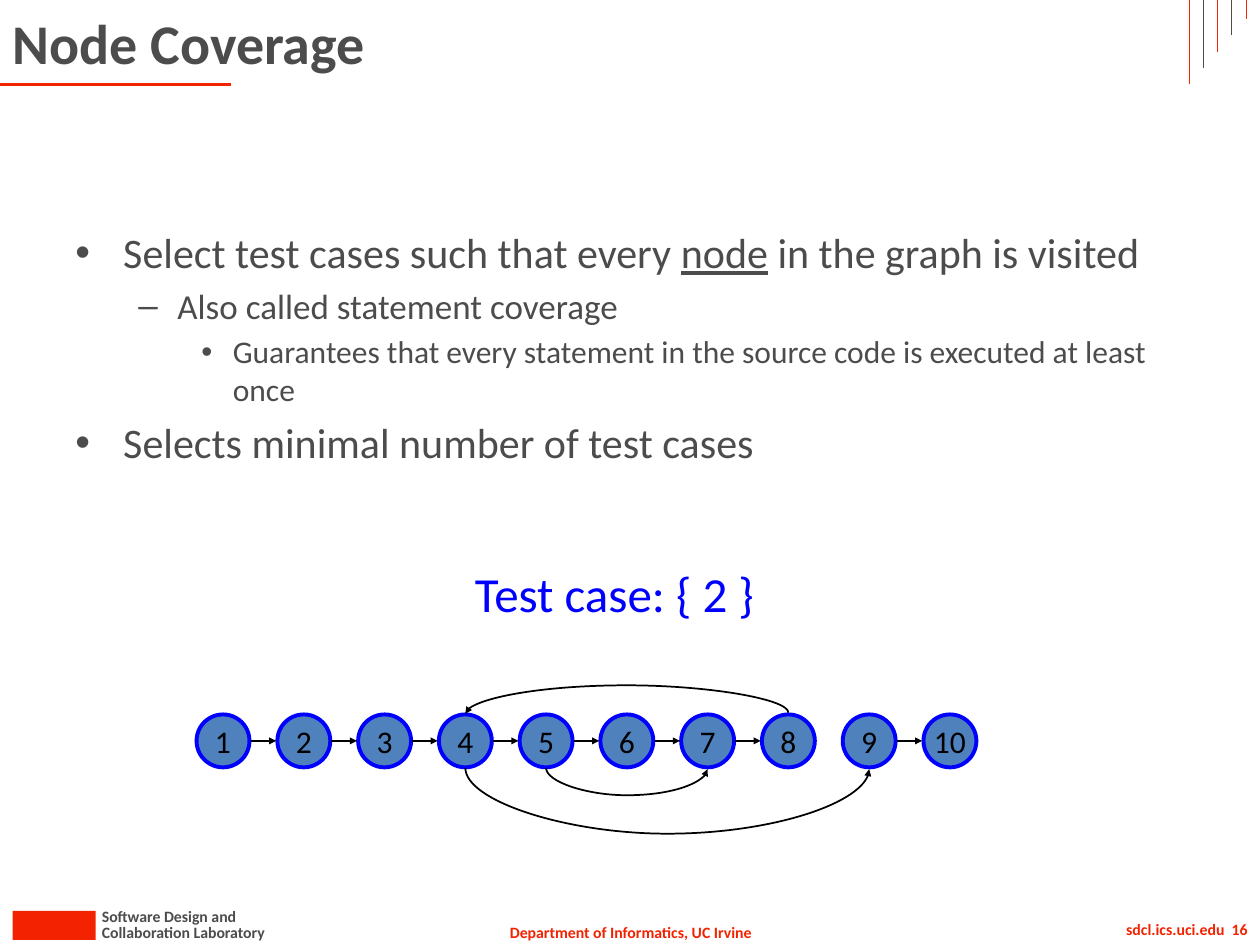
import pptx
import pptx.dml.color
import pptx.enum.shapes
import pptx.enum.text
import pptx.oxml
import pptx.oxml.ns
import pptx.util

Inches = pptx.util.Inches
Pt = pptx.util.Pt
RGBColor = pptx.dml.color.RGBColor
ALIGN = pptx.enum.text.PP_ALIGN
ANCHOR = pptx.enum.text.MSO_ANCHOR
CONNECTOR = pptx.enum.shapes.MSO_CONNECTOR
SHAPE = pptx.enum.shapes.MSO_SHAPE
qn = pptx.oxml.ns.qn

RED = RGBColor(0xF3, 0x22, 0x00)
GRAY = RGBColor(0x4C, 0x4C, 0x4C)
BLUE = RGBColor(0x00, 0x00, 0xFF)
STEEL = RGBColor(0x4F, 0x81, 0xBD)
BLACK = RGBColor(0x00, 0x00, 0x00)

FONT = "Calibri"
NODE_COUNT = 10
NODE_SIZE = 0.42
NODE_PITCH = 0.641
FIRST_CENTER = 1.77
NODE_MIDDLE = 5.88
NODE_REACH = 0.22
ARC_WIDTH = 0.01


def add_element(parent, tag, **attributes):
    """Append a DrawingML element and return it."""
    element = pptx.oxml.parse_xml(f"<a:{tag} {pptx.oxml.ns.nsdecls('a')}/>")
    for name, value in attributes.items():
        element.set(name, str(value))
    parent.append(element)
    return element


def write_text(para, text, size=18, color=GRAY, bold=False, underline=False, align=None):
    """Add a formatted span to a paragraph."""
    if align is not None:
        para.alignment = align
    span = para.add_run()
    span.text = text
    span.font.name = FONT
    span.font.size = Pt(size)
    span.font.bold = bold
    span.font.underline = underline
    span.font.color.rgb = color


def add_label(page, text, left, top, width, height, wrap=False, **text_format):
    """Add a text box holding one line."""
    box = page.shapes.add_textbox(Inches(left), Inches(top), Inches(width), Inches(height))
    box.text_frame.word_wrap = wrap
    write_text(box.text_frame.paragraphs[0], text, **text_format)


def add_title(page, text):
    """Place and format the title placeholder."""
    title = page.shapes.title
    title.left, title.top = Inches(0), Inches(0)
    title.width, title.height = Inches(9), Inches(0.67)
    title.text_frame.vertical_anchor = ANCHOR.MIDDLE
    write_text(title.text_frame.paragraphs[0], text, size=32, bold=True, align=ALIGN.LEFT)


def add_bullets(page, items):
    """Add the bulleted outline from (level, spans) pairs."""
    levels = [(24, 0.38, 0.38, "•"), (20, 0.81, 0.31, "–"), (18, 1.25, 0.25, "•")]
    box = page.shapes.add_textbox(Inches(0.5), Inches(1.75), Inches(8.94), Inches(4.95))
    frame = box.text_frame
    frame.word_wrap = True
    for index, (level, spans) in enumerate(items):
        size, margin, hang, mark = levels[level]
        para = frame.add_paragraph() if index else frame.paragraphs[0]
        para.level = level
        para.space_before = Pt(size * 0.2)
        properties = para._p.get_or_add_pPr()
        properties.set("marL", str(Inches(margin)))
        properties.set("indent", str(-Inches(hang)))
        add_element(properties, "buFont", typeface="Arial")
        add_element(properties, "buChar", char=mark)
        for text, underline in spans:
            write_text(para, text, size=size, underline=underline)


def add_block(page, kind, left, top, width, height, fill):
    """Add a filled preset shape without line or shadow."""
    block = page.shapes.add_shape(kind, Inches(left), Inches(top), Inches(width), Inches(height))
    block.shadow.inherit = False
    block.fill.solid()
    block.fill.fore_color.rgb = fill
    block.line.fill.background()
    return block


def add_line(page, start, end, color=BLACK, width=1, arrow=False, kind=CONNECTOR.STRAIGHT):
    """Add a connector between two points, with an optional arrowhead."""
    line = page.shapes.add_connector(kind, *map(Inches, start + end))
    line.line.color.rgb = color
    line.line.width = Pt(width)
    if arrow:
        add_element(line.line._get_or_add_ln(), "tailEnd", type="triangle", w="sm", len="sm")
    add_element(line._element.spPr, "effectLst")
    return line


def node_center(number):
    """Return the horizontal center of a numbered node."""
    return FIRST_CENTER + (number - 1) * NODE_PITCH


def add_node(page, number):
    """Add one numbered graph node."""
    node = add_block(page, SHAPE.OVAL, node_center(number) - NODE_SIZE / 2,
                     NODE_MIDDLE - NODE_SIZE / 2, NODE_SIZE, NODE_SIZE, STEEL)
    node.line.color.rgb = BLUE
    node.line.width = Pt(2.25)
    node.text_frame.word_wrap = False
    node.text_frame.vertical_anchor = ANCHOR.MIDDLE
    write_text(node.text_frame.paragraphs[0], str(number), color=BLACK, align=ALIGN.CENTER)


def add_arc(page, source, target, depth):
    """Add a curved edge that bulges down, or up for a negative depth."""
    start, end = node_center(source), node_center(target)
    span = abs(end - start)
    level = NODE_MIDDLE + (NODE_REACH if depth > 0 else -NODE_REACH)
    left = (start + end - ARC_WIDTH) / 2
    top = level - span / 2
    arc = add_line(page, (left, top), (left + ARC_WIDTH, top + span),
                   arrow=True, kind=CONNECTOR.CURVE)
    frame = arc._element.spPr.find(qn("a:xfrm"))
    frame.set("rot", str(270 * 60000))
    frame.set("flipH", "1")
    if end < start:
        frame.set("flipV", "1")
    geometry = arc._element.spPr.find(qn("a:prstGeom"))
    guides = geometry.find(qn("a:avLst"))
    if guides is None:
        guides = add_element(geometry, "avLst")
    add_element(guides, "gd", name="adj1", fmla=f"val {round(depth / ARC_WIDTH * 100000)}")


def add_graph(page):
    """Draw the control-flow graph."""
    for number in range(1, NODE_COUNT + 1):
        add_node(page, number)
    for number in range(1, NODE_COUNT):
        if number != 8:
            add_line(page, (node_center(number) + NODE_REACH, NODE_MIDDLE),
                     (node_center(number + 1) - NODE_REACH, NODE_MIDDLE), arrow=True)
    for source, target, depth in [(8, 4, -0.22), (4, 9, 0.53), (5, 7, 0.22)]:
        add_arc(page, source, target, depth)


def add_frame(page):
    """Draw the footer and the decorative rules."""
    small = {"size": 9, "bold": True}
    add_label(page, "Department of Informatics, UC Irvine", 3.93, 7.27, 2.15, 0.25,
              color=RED, align=ALIGN.CENTER, **small)
    add_block(page, SHAPE.RECTANGLE, 0.1, 7.23, 0.66, 0.23, RED)
    add_label(page, "Collaboration Laboratory", 0.71, 7.27, 1.53, 0.25, **small)
    add_label(page, "Software Design and", 0.71, 7.15, 1.29, 0.25, **small)
    add_label(page, "sdcl.ics.uci.edu  16", 7.84, 7.25, 2.16, 0.25, wrap=True,
              color=RED, align=ALIGN.RIGHT, **small)
    add_line(page, (0, 0.67), (1.83, 0.67), color=RED, width=1.5)
    for index in range(5):
        left = 9.44 + index * 0.1125
        add_line(page, (left, 0.67 - index * 0.13), (left, 0),
                 color=GRAY if index % 2 else RED, width=0.5)


def main():
    """Build and save the slide."""
    deck = pptx.Presentation()
    deck.slide_width, deck.slide_height = Inches(10), Inches(7.5)
    page = deck.slides.add_slide(deck.slide_layouts[5])
    add_frame(page)
    add_title(page, "Node Coverage")
    add_bullets(page, [
        (0, [("Select test cases such that every ", False), ("node", True),
             (" in the graph is visited", False)]),
        (1, [("Also called statement coverage", False)]),
        (2, [("Guarantees that every statement in the source code is executed at least once",
              False)]),
        (0, [("Selects minimal number of test cases", False)]),
    ])
    add_graph(page)
    add_label(page, "Test case: { 2 }", 3.63, 4.42, 2.49, 0.57,
              size=28, color=BLUE, align=ALIGN.CENTER)
    deck.save("out.pptx")


if __name__ == "__main__":
    main()
